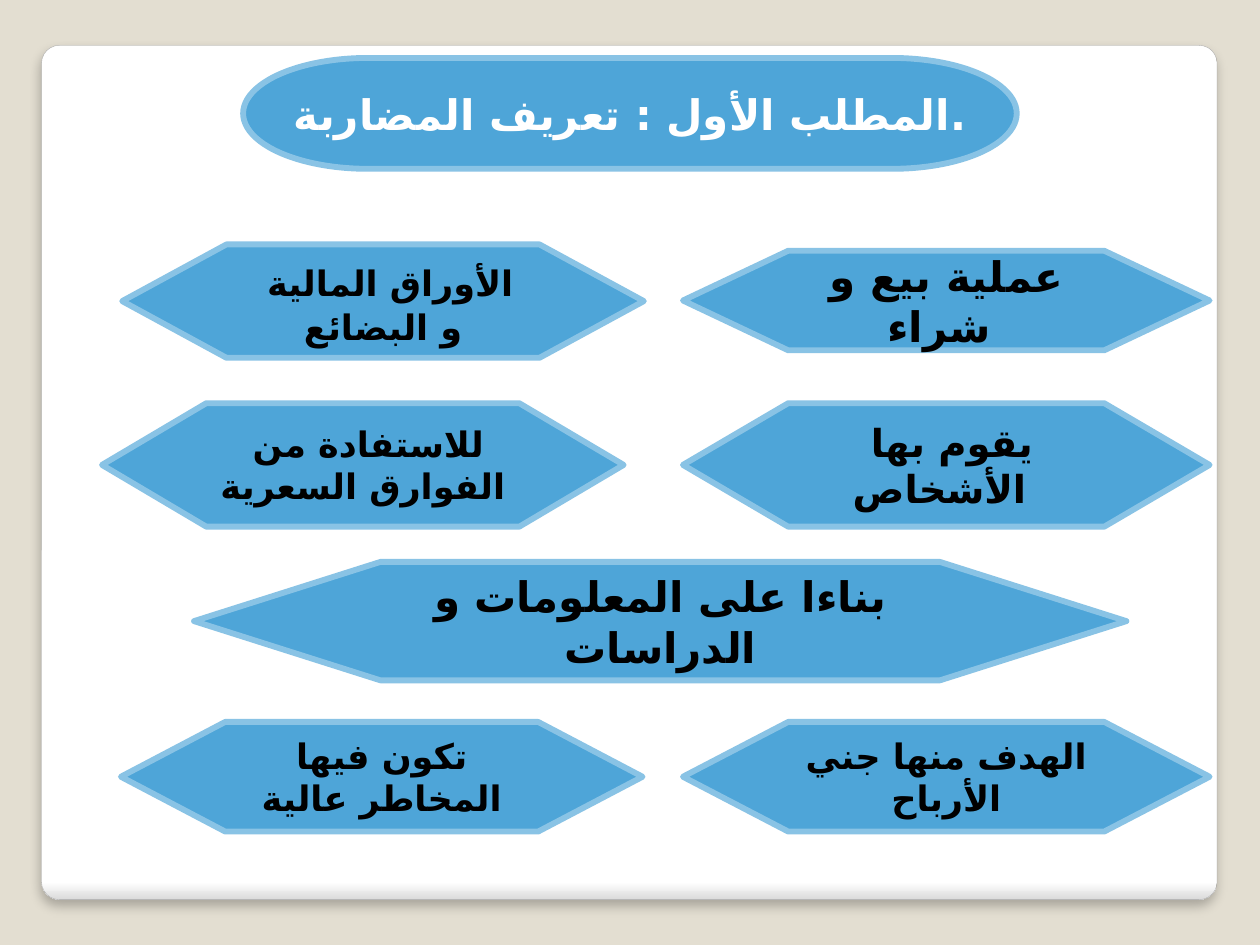
from dataclasses import dataclass

from lxml import etree
from pptx import Presentation
from pptx import util as u
from pptx.dml.color import RGBColor
from pptx.enum import shapes, text
from pptx.oxml.ns import qn
from pptx.shapes.autoshape import Shape
from pptx.slide import Slide
from pptx.text.text import TextFrame


@dataclass(frozen=True)
class Theme:
    font: str = "DejaVu Sans"
    backdrop: str = "E3DED1"
    panel: str = "FFFFFF"
    panel_foot: str = "DADADA"
    panel_edge: str = "A4A4A4"
    shadow: str = "000000"
    blue: str = "4EA5D8"
    edge: str = "89C3E5"
    heading: str = "FFFFFF"
    ink: str = "000000"
    edge_width: float = 3.35
    large: int = 24
    medium: int = 22
    small: int = 20
    lead: int = 18


@dataclass(frozen=True)
class Box:
    left: float
    top: float
    width: float
    height: float

    def lengths(self) -> tuple[int, ...]:
        return tuple(u.Inches(v) for v in (self.left, self.top, self.width, self.height))


@dataclass(frozen=True)
class Idea:
    wording: str
    box: Box
    size: int
    lead_size: int = 0


THEME = Theme()
RIGHT, RIGHT_WIDTH, LEFT_WIDTH = 5.42, 4.18, 4.14
HEADING_BOX = Box(1.93, 0.46, 6.14, 0.88)
IDEAS = (
    Idea("عملية بيع و شراء ", Box(RIGHT, 1.99, RIGHT_WIDTH, 0.79), THEME.large),
    Idea("الأوراق المالية و البضائع", Box(0.97, 1.94, LEFT_WIDTH, 0.9), THEME.small, THEME.large),
    Idea("يقوم بها الأشخاص ", Box(RIGHT, 3.2, RIGHT_WIDTH, 0.98), THEME.medium, THEME.lead),
    Idea("للاستفادة من الفوارق السعرية ", Box(0.81, 3.2, LEFT_WIDTH, 0.98), THEME.small, THEME.lead),
    Idea("بناءا على المعلومات و الدراسات", Box(1.54, 4.46, 7.4, 0.94), THEME.large),
    Idea("الهدف منها جني الأرباح", Box(RIGHT, 5.73, RIGHT_WIDTH, 0.87), THEME.small),
    Idea("تكون فيها المخاطر عالية", Box(0.96, 5.73, LEFT_WIDTH, 0.87), THEME.small),
)


def rgb(value: str) -> RGBColor:
    return RGBColor.from_string(value)


def write(frame: TextFrame, wording: str, *, size: int, color: str, lead_size: int = 0) -> None:
    frame.word_wrap = True
    frame.auto_size = text.MSO_AUTO_SIZE.NONE
    frame.vertical_anchor = text.MSO_ANCHOR.MIDDLE
    paragraph = frame.paragraphs[0]
    paragraph.alignment = text.PP_ALIGN.CENTER
    pieces = [(" ", lead_size)] if lead_size else []
    for piece, points in pieces + [(wording, size)]:
        run = paragraph.add_run()
        run.text = piece
        run.font.name = THEME.font
        run.font.size = u.Pt(points)
        run.font.bold = True
        run.font.color.rgb = rgb(color)
        complex_script = etree.SubElement(run.font._element, qn("a:cs"))
        complex_script.set("typeface", THEME.font)


def draw_blue(slide: Slide, kind: shapes.MSO_SHAPE, box: Box) -> Shape:
    block = slide.shapes.add_shape(kind, *box.lengths())
    block.shadow.inherit = False
    block.fill.solid()
    block.fill.fore_color.rgb = rgb(THEME.blue)
    block.line.color.rgb = rgb(THEME.edge)
    block.line.width = u.Pt(THEME.edge_width)
    return block


def draw_panel(slide: Slide) -> None:
    box = Box(0.33, 0.36, 9.33, 6.78)
    panel = slide.shapes.add_shape(shapes.MSO_SHAPE.ROUNDED_RECTANGLE, *box.lengths())
    panel.adjustments[0] = 0.021
    panel.fill.gradient()
    panel.fill.gradient_angle = 270
    stops = zip(panel.fill.gradient_stops, (0.98, 1), (THEME.panel, THEME.panel_foot))
    for stop, position, color in stops:
        stop.position = position
        stop.color.rgb = rgb(color)
    panel.line.color.rgb = rgb(THEME.panel_edge)
    panel.line.width = u.Pt(0.16)
    panel.shadow.inherit = False
    effects = panel._element.spPr.find(qn("a:effectLst"))
    shadow = etree.SubElement(
        effects, qn("a:outerShdw"), blurRad=str(u.Pt(6)), dist=str(u.Pt(4)),
        dir="5400000", algn="tl", rotWithShape="0",
    )
    tint = etree.SubElement(shadow, qn("a:srgbClr"), val=THEME.shadow)
    etree.SubElement(tint, qn("a:alpha"), val="25000")


def draw_heading(slide: Slide) -> None:
    draw_blue(slide, shapes.MSO_SHAPE.FLOWCHART_TERMINATOR, HEADING_BOX)
    heading = slide.shapes.title
    heading.left, heading.top, heading.width, heading.height = HEADING_BOX.lengths()
    write(heading.text_frame, "المطلب الأول : تعريف المضاربة.", size=THEME.large, color=THEME.heading)
    slide.shapes._spTree.append(heading._element)


def draw_idea(slide: Slide, idea: Idea) -> None:
    block = draw_blue(slide, shapes.MSO_SHAPE.FLOWCHART_PREPARATION, idea.box)
    write(block.text_frame, idea.wording, size=idea.size, color=THEME.ink, lead_size=idea.lead_size)


def main() -> None:
    deck = Presentation()
    deck.slide_width, deck.slide_height = u.Inches(10), u.Inches(7.5)
    slide = deck.slides.add_slide(deck.slide_layouts[5])
    slide.background.fill.solid()
    slide.background.fill.fore_color.rgb = rgb(THEME.backdrop)
    draw_panel(slide)
    draw_heading(slide)
    for idea in IDEAS:
        draw_idea(slide, idea)
    deck.save("out.pptx")


if __name__ == "__main__":
    main()
